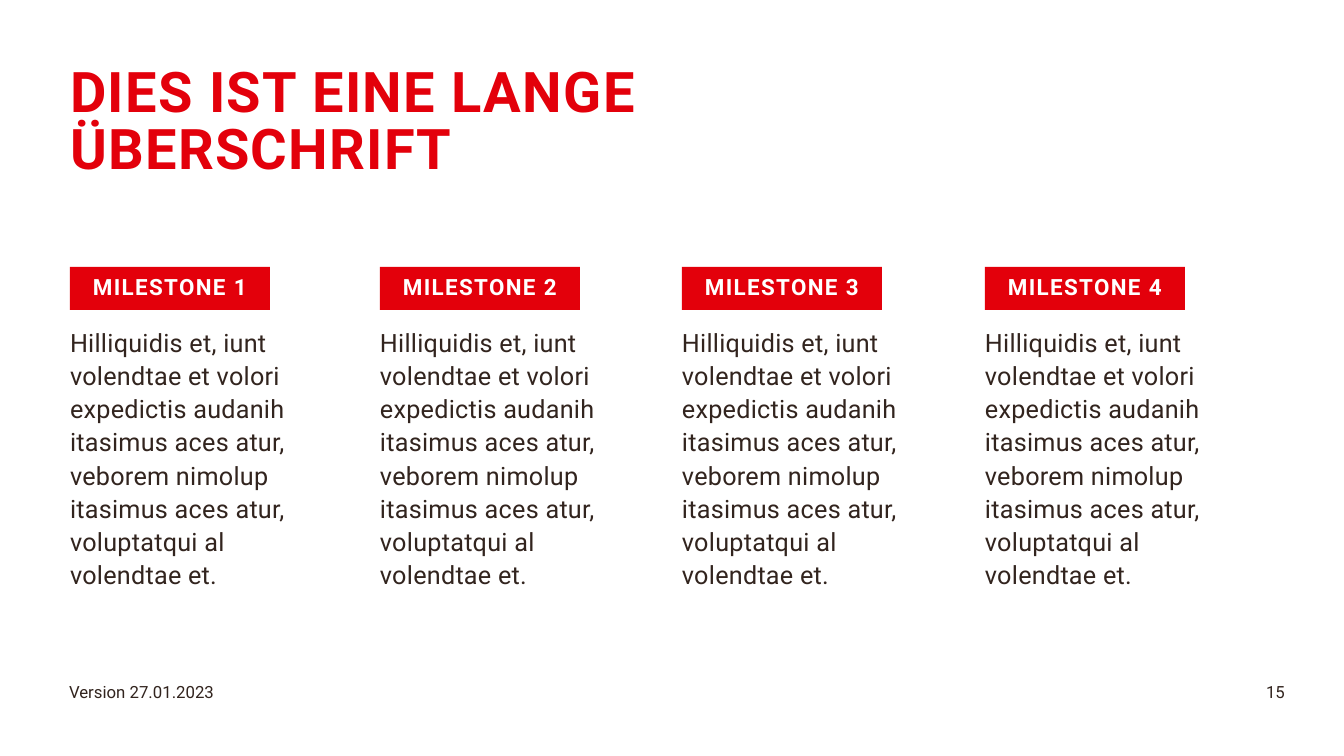
from pptx import Presentation
from pptx import util as u
from pptx.dml import color
from pptx.enum import shapes, text

PX = 9071.43  # EMU per px, at 100.8 px to the inch
RED, BROWN, WHITE = "E3000B", "32241E", "FFFFFF"
COLUMN_LEFTS = (70, 380, 682, 985)
BODY = ("Hilliquidis et, iunt volendtae et volori expedictis audanih "
        "itasimus aces atur, veborem nimolup itasimus aces atur, "
        "voluptatqui al volendtae et.")


def rgb(value):
    return color.RGBColor.from_string(value)


def add_text(wording, left, top, width, height, size, ink=BROWN, bold=False,
             tracking=0, spacing=1.0, align=text.PP_ALIGN.LEFT, fill=None):
    """Add a text box, or a filled rectangle with centred text if fill is given.

    Tracking is in hundredths of a point.
    """
    place = [u.Emu(round(n * PX)) for n in (left, top, width, height)]
    if fill:
        box = slide.shapes.add_shape(shapes.MSO_SHAPE.RECTANGLE, *place)
        box.shadow.inherit = False
        box.fill.solid()
        box.fill.fore_color.rgb = rgb(fill)
        box.line.fill.background()
    else:
        box = slide.shapes.add_textbox(*place)
    frame = box.text_frame
    frame.word_wrap = True
    frame.margin_left = frame.margin_right = 0
    frame.margin_top = frame.margin_bottom = 0
    frame.vertical_anchor = text.MSO_ANCHOR.MIDDLE if fill else text.MSO_ANCHOR.TOP
    frame.text = wording
    para = frame.paragraphs[0]
    para.alignment = align
    para.line_spacing = spacing
    span = para.runs[0]
    span.font.name = "Roboto"
    span.font.size = u.Pt(size)
    span.font.bold = bold
    span.font.color.rgb = rgb(ink)
    if tracking:
        span._r.get_or_add_rPr().set("spc", str(tracking))


deck = Presentation()
deck.slide_width = u.Emu(round(1344 * PX))
deck.slide_height = u.Emu(round(756 * PX))
slide = deck.slides.add_slide(deck.slide_layouts[6])

add_text("15", 1068, 682, 217, 40, 12, align=text.PP_ALIGN.RIGHT)
add_text("Version 27.01.2023", 69, 682, 830, 40, 12)
add_text("DIES IST EINE LANGE ÜBERSCHRIFT", 70, 67, 827, 113, 40, RED,
         bold=True, tracking=100, spacing=0.85)

for number, left in enumerate(COLUMN_LEFTS, start=1):
    add_text(BODY, left, 324, 243, 311, 18, tracking=20, spacing=1.1)
    add_text(f"MILESTONE {number}", left, 267, 200, 43, 16, WHITE, bold=True,
             tracking=100, spacing=0.85, align=text.PP_ALIGN.CENTER, fill=RED)

deck.save("out.pptx")
